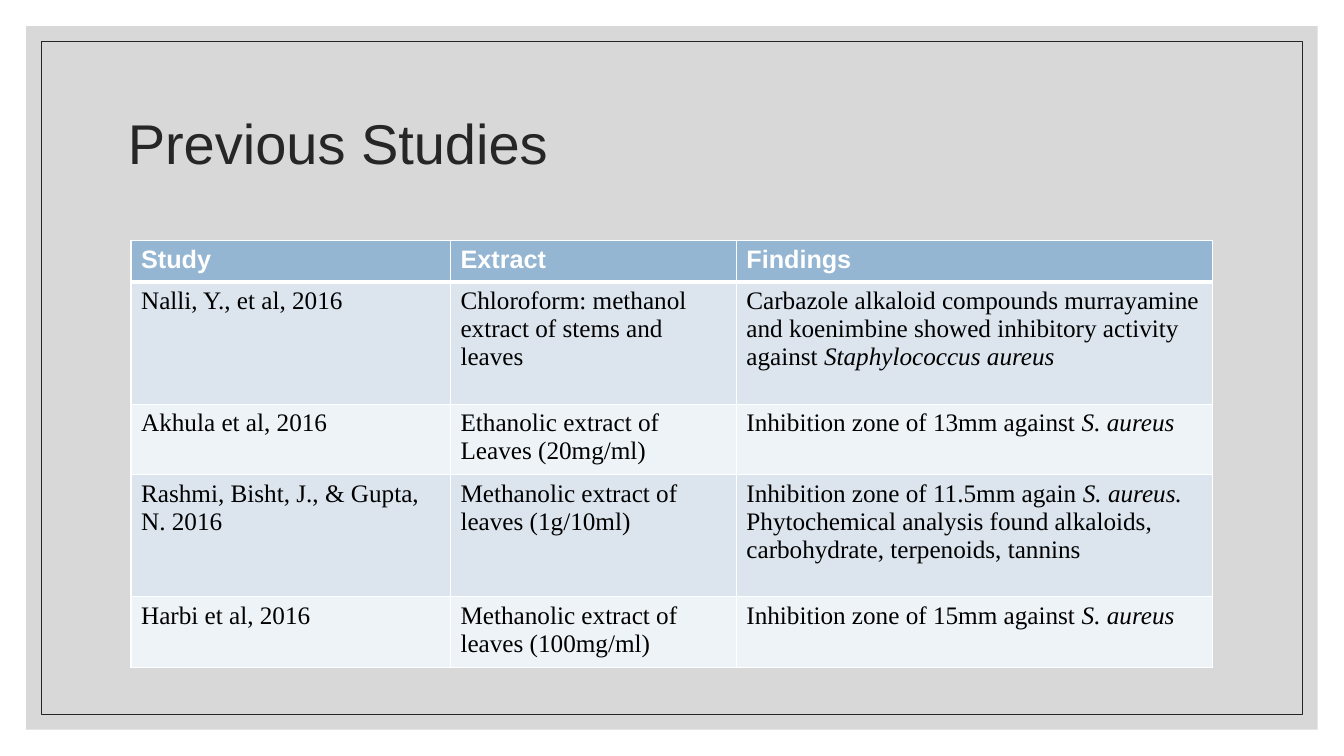
import pptx
import pptx.util
import pptx.dml.color
import pptx.enum.shapes
import pptx.enum.text
import pptx.oxml
import pptx.oxml.ns

Pt = pptx.util.Pt
qn = pptx.oxml.ns.qn
W, H = 960, 540

COLORS = {
    "panel": "BFBFBF",
    "ink": "262626",
    "header": "94B6D2",
    "band_dark": "DCE5EE",
    "band_light": "EEF3F7",
    "white": "FFFFFF",
    "body": "000000",
}
TITLE = {"name": "Arial", "size": Pt(40), "color": "ink"}
HEADER = {"name": "Arial", "size": Pt(18), "bold": True, "color": "white"}
BODY = {"name": "Times New Roman", "size": Pt(18), "bold": False, "color": "body"}

COLUMN_WIDTHS = [228.2, 204.2, 340]
ROW_HEIGHTS = [29.5, 87.2, 47.2, 87.2, 47.2]
STUDIES = [
    ["Study", "Extract", "Findings"],
    ["Nalli, Y., et al, 2016",
     "Chloroform: methanol extract of stems and leaves",
     "Carbazole alkaloid compounds murrayamine and koenimbine showed "
     "inhibitory activity against *Staphylococcus aureus*"],
    ["Akhula et al, 2016",
     "Ethanolic extract of Leaves (20mg/ml)",
     "Inhibition zone of 13mm against *S. aureus*"],
    ["Rashmi, Bisht, J., & Gupta, N. 2016",
     "Methanolic extract of leaves (1g/10ml)",
     "Inhibition zone of 11.5mm again *S. aureus. *Phytochemical analysis "
     "found alkaloids, carbohydrate, terpenoids, tannins"],
    ["Harbi et al, 2016",
     "Methanolic extract of leaves (100mg/ml)",
     "Inhibition zone of 15mm against *S. aureus*"],
]


def rgb(key):
    return pptx.dml.color.RGBColor.from_string(COLORS[key])


def add_runs(p, text, style):
    for i, part in enumerate(text.split("*")):
        if not part:
            continue
        r = p.add_run()
        r.text = part
        for attr, value in {**style, "italic": i % 2 == 1}.items():
            if attr == "color":
                r.font.color.rgb = rgb(value)
            else:
                setattr(r.font, attr, value)


def add_inset_rect(s, inset):
    sp = s.shapes.add_shape(
        pptx.enum.shapes.MSO_SHAPE.RECTANGLE,
        Pt(inset), Pt(inset), Pt(W - 2 * inset), Pt(H - 2 * inset))
    sp.shadow.inherit = False
    return sp


def add_backdrop(s):
    panel = add_inset_rect(s, 18.72)
    panel.fill.solid()
    panel.fill.fore_color.rgb = rgb("panel")
    panel.line.fill.background()
    color = panel.fill._xPr.find(qn("a:solidFill"))[0]
    pptx.oxml.ns.nsdecls("a")
    color.append(pptx.oxml.parse_xml(
        f'<a:alpha {pptx.oxml.ns.nsdecls("a")} val="60000"/>'))
    frame = add_inset_rect(s, 29.52)
    frame.fill.background()
    frame.line.color.rgb = rgb("ink")
    frame.line.width = Pt(0.5)


def add_title(s, text, x, y, w, h):
    tf = s.shapes.add_textbox(Pt(x), Pt(y), Pt(w), Pt(h)).text_frame
    tf.word_wrap = True
    tf.vertical_anchor = pptx.enum.text.MSO_ANCHOR.MIDDLE
    p = tf.paragraphs[0]
    p.line_spacing = 0.9
    add_runs(p, text, TITLE)


def set_borders(cell, widths):
    tcPr = cell._tc.get_or_add_tcPr()
    for i, (side, width) in enumerate(widths.items()):
        tcPr.insert(i, pptx.oxml.parse_xml(
            f'<a:ln{side} {pptx.oxml.ns.nsdecls("a")} w="{Pt(width)}">'
            f'<a:solidFill><a:srgbClr val="{COLORS["white"]}"/></a:solidFill>'
            f'</a:ln{side}>'))


def add_studies_table(s, x, y):
    table = s.shapes.add_table(
        len(STUDIES), len(COLUMN_WIDTHS), Pt(x), Pt(y),
        Pt(sum(COLUMN_WIDTHS)), Pt(sum(ROW_HEIGHTS))).table
    for column, width in zip(table.columns, COLUMN_WIDTHS):
        column.width = Pt(width)
    for i, (row, height) in enumerate(zip(table.rows, ROW_HEIGHTS)):
        row.height = Pt(height)
        band = "header" if i == 0 else "band_dark" if i % 2 else "band_light"
        borders = {"L": 1, "R": 1, "T": 3 if i == 1 else 1, "B": 1 if i else 3}
        for cell, text in zip(row.cells, STUDIES[i]):
            cell.fill.solid()
            cell.fill.fore_color.rgb = rgb(band)
            set_borders(cell, borders)
            add_runs(cell.text_frame.paragraphs[0], text, BODY if i else HEADER)


def main():
    prs = pptx.Presentation()
    prs.slide_width, prs.slide_height = Pt(W), Pt(H)
    s = prs.slides.add_slide(prs.slide_layouts[6])
    add_backdrop(s)
    add_title(s, "Previous Studies", 84.24, 50.4, 792, 108)
    add_studies_table(s, 93.6, 172)
    prs.save("out.pptx")


if __name__ == "__main__":
    main()
